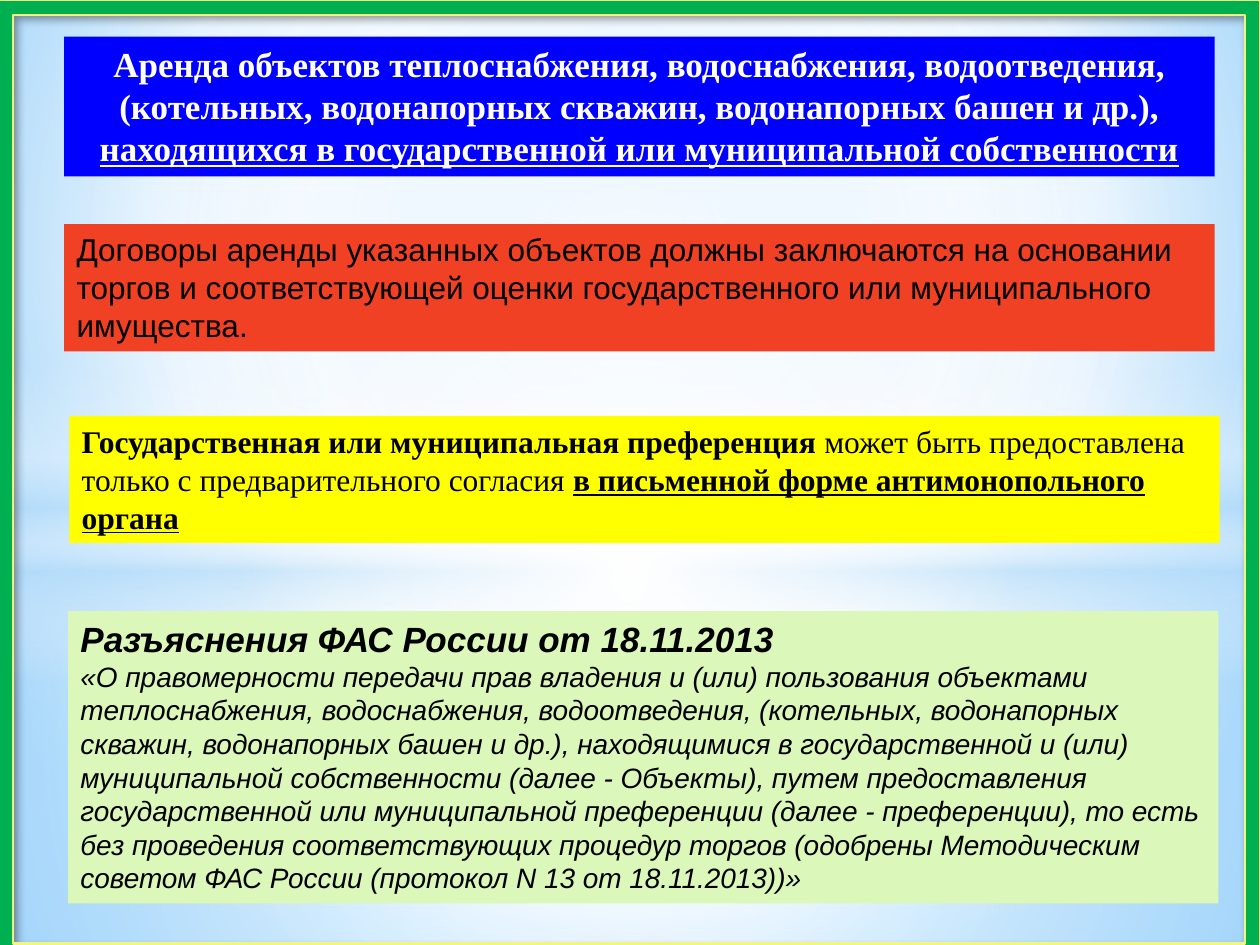
from lxml import etree
from pptx import Presentation
from pptx import util as u
from pptx.dml.color import RGBColor
from pptx.enum import shapes, text
from pptx.oxml import ns

WIDTH, HEIGHT = u.Inches(10), u.Inches(7.5)
WHITE = RGBColor(0xFF, 0xFF, 0xFF)
BLACK = RGBColor(0x00, 0x00, 0x00)
BLUE = RGBColor(0x00, 0x00, 0xFF)
RED = RGBColor(0xF1, 0x41, 0x24)
YELLOW = RGBColor(0xFF, 0xFF, 0x00)
PALE_GREEN = RGBColor(0xDC, 0xF7, 0xBA)
GREEN = RGBColor(0x00, 0xB0, 0x50)
PALE_YELLOW = RGBColor(0xF3, 0xF6, 0x7C)
SKY = RGBColor(0xB4, 0xDC, 0xFA)
SKY_LIGHT = RGBColor(0x9E, 0xD5, 0xFF)
SKY_DEEP = RGBColor(0x5B, 0xB9, 0xFF)

SANS, SERIF = "Arial", "Times New Roman"
CENTER = (50, 50, 50, 50)
PANEL_WIDTH = 91.3


def percent_box(left, top, width, height):
    sides = ((left, WIDTH), (top, HEIGHT), (width, WIDTH), (height, HEIGHT))
    return [u.Emu(round(share * whole / 100)) for share, whole in sides]


def set_gradient(holder, stops, focus=None, angle=0):
    solid = holder.find(ns.qn("a:solidFill"))
    gradient = etree.Element(ns.qn("a:gradFill"), rotWithShape="1")
    stop_list = etree.SubElement(gradient, ns.qn("a:gsLst"))
    for position, color, opacity in stops:
        stop = etree.SubElement(stop_list, ns.qn("a:gs"), pos=str(position * 1000))
        tint = etree.SubElement(stop, ns.qn("a:srgbClr"), val=str(color))
        if opacity < 100:
            etree.SubElement(tint, ns.qn("a:alpha"), val=str(opacity * 1000))
    if focus:
        circle = etree.SubElement(gradient, ns.qn("a:path"), path="circle")
        edges = {side: str(share * 1000) for side, share in zip("ltrb", focus)}
        etree.SubElement(circle, ns.qn("a:fillToRect"), **edges)
    else:
        etree.SubElement(gradient, ns.qn("a:lin"), ang=str(angle * 60000), scaled="0")
    holder.replace(solid, gradient)


def add_glow(slide, kind, box, stops, **direction):
    shape = slide.shapes.add_shape(kind, *percent_box(*box))
    shape.shadow.inherit = False
    shape.line.fill.background()
    shape.fill.solid()
    set_gradient(shape.element.spPr, stops, **direction)


def add_backdrop(slide):
    slide.background.fill.solid()
    set_gradient(
        slide.element.find(".//" + ns.qn("p:bgPr")),
        [(0, SKY_LIGHT, 100), (60, WHITE, 100), (100, SKY_DEEP, 100)],
        focus=(20, 10, 20, 60),
    )
    rectangle, oval = shapes.MSO_SHAPE.RECTANGLE, shapes.MSO_SHAPE.OVAL
    add_glow(slide, rectangle, (0, 56.4, 100, 43.6),
             [(0, WHITE, 92), (37, WHITE, 77), (100, SKY, 80)], focus=CENTER)
    add_glow(slide, rectangle, (0, 0, 100, 56.4),
             [(0, WHITE, 90), (48, WHITE, 63), (100, SKY, 80)], focus=CENTER)
    add_glow(slide, rectangle, (0, 38.67, 100, 33.33),
             [(0, WHITE, 0), (29, WHITE, 30), (45, SKY, 40),
              (55, WHITE, 26), (65, SKY, 60), (100, WHITE, 0)], angle=90)
    add_glow(slide, oval, (0, 23.33, 100, 74.4),
             [(0, WHITE, 100), (54, WHITE, 0)], focus=CENTER)


def add_frame(slide, box):
    frame = slide.shapes.add_shape(shapes.MSO_SHAPE.FRAME, *percent_box(*box))
    frame.adjustments[0] = 0.016
    frame.fill.solid()
    frame.fill.fore_color.rgb = GREEN
    frame.line.color.rgb = PALE_YELLOW
    frame.line.width = u.Pt(1.25)
    frame.shadow.inherit = False
    effects = frame.element.spPr.find(ns.qn("a:effectLst"))
    shadow = etree.SubElement(
        effects, ns.qn("a:outerShdw"), blurRad=str(u.Pt(4)), dist=str(u.Pt(3)),
        dir=str(45 * 60000), algn="tl", rotWithShape="0")
    color = etree.SubElement(shadow, ns.qn("a:srgbClr"), val=str(BLACK))
    etree.SubElement(color, ns.qn("a:alpha"), val="40000")


def add_text(paragraph, words, font=SANS, size=18, color=BLACK,
             bold=False, italic=False, underline=False):
    run = paragraph.add_run()
    run.text = words
    run.font.name = font
    run.font.size = u.Pt(size)
    run.font.color.rgb = color
    run.font.bold = bold
    run.font.italic = italic
    run.font.underline = underline


def add_panel(slide, box, fill):
    panel = slide.shapes.add_textbox(*percent_box(*box))
    panel.fill.solid()
    panel.fill.fore_color.rgb = fill
    frame = panel.text_frame
    frame.word_wrap = True
    frame.auto_size = text.MSO_AUTO_SIZE.SHAPE_TO_FIT_TEXT
    return frame


def add_heading(slide, box):
    paragraph = add_panel(slide, box, BLUE).paragraphs[0]
    paragraph.alignment = text.PP_ALIGN.CENTER
    style = dict(font=SERIF, size=20, color=WHITE, bold=True)
    add_text(paragraph, "Аренда объектов теплоснабжения, водоснабжения, водоотведения, "
             "(котельных, водонапорных скважин, водонапорных башен и др.), ", **style)
    add_text(paragraph, "находящихся в государственной или муниципальной собственности",
             underline=True, **style)


def add_lease_rule(slide, box):
    paragraph = add_panel(slide, box, RED).paragraphs[0]
    add_text(paragraph, "Договоры аренды указанных объектов должны заключаются на основании "
             "торгов и соответствующей оценки государственного или муниципального имущества.")


def add_preference_rule(slide, box):
    paragraph = add_panel(slide, box, YELLOW).paragraphs[0]
    add_text(paragraph, "Государственная или муниципальная преференция ", font=SERIF, bold=True)
    add_text(paragraph, "может быть предоставлена только с предварительного согласия ", font=SERIF)
    add_text(paragraph, "в письменной форме антимонопольного органа",
             font=SERIF, bold=True, underline=True)


def add_clarification(slide, box):
    frame = add_panel(slide, box, PALE_GREEN)
    add_text(frame.paragraphs[0], "Разъяснения ФАС России от 18.11.2013",
             size=20, bold=True, italic=True)
    add_text(
        frame.add_paragraph(),
        "«О правомерности передачи прав владения и (или) пользования объектами "
        "теплоснабжения, водоснабжения, водоотведения, (котельных, водонапорных скважин, "
        "водонапорных башен и др.), находящимися в государственной и (или) муниципальной "
        "собственности (далее - Объекты), путем предоставления государственной или "
        "муниципальной преференции (далее - преференции), то есть без проведения "
        "соответствующих процедур торгов (одобрены Методическим советом ФАС России "
        "(протокол N 13 от 18.11.2013))»",
        size=16, italic=True)


def main():
    presentation = Presentation()
    presentation.slide_width, presentation.slide_height = WIDTH, HEIGHT
    slide = presentation.slides.add_slide(presentation.slide_layouts[6])
    add_backdrop(slide)
    add_frame(slide, (-0.2, 0, 100.2, 101.47))
    add_clarification(slide, (5.4, 64.67, PANEL_WIDTH, 30.93))
    add_heading(slide, (5.1, 3.87, PANEL_WIDTH, 14.8))
    add_lease_rule(slide, (5.1, 23.73, PANEL_WIDTH, 13.47))
    add_preference_rule(slide, (5.5, 44, PANEL_WIDTH, 13.47))
    presentation.save("out.pptx")


if __name__ == "__main__":
    main()
